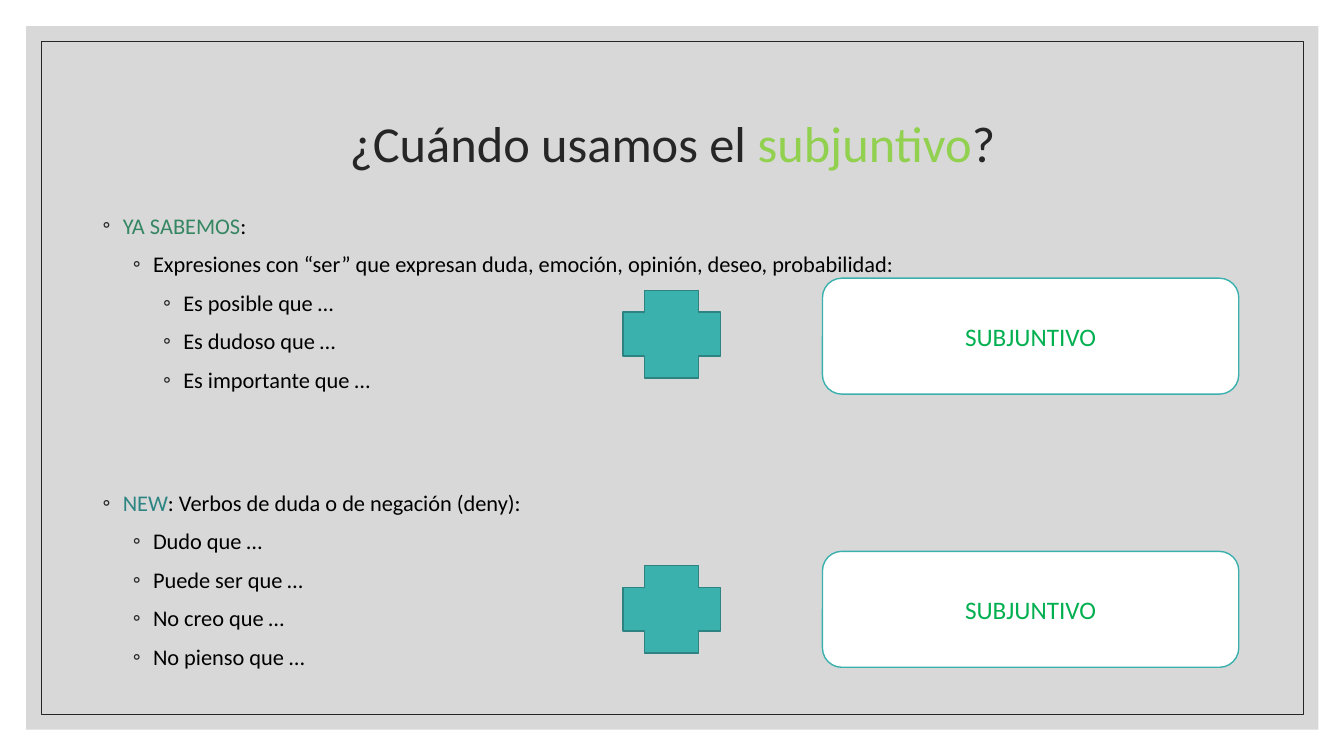
from lxml import etree
from pptx import Presentation
from pptx import util as u
from pptx.dml.color import RGBColor
from pptx.enum import shapes, text
from pptx.oxml import ns

FONT = "Calibri"
DARK, BLACK, WHITE = "262626", "000000", "FFFFFF"
TEAL, DARK_TEAL = "3BB1AE", "2C8381"

OUTLINE = [
    (0, 0, [("YA SABEMOS", "358662"), (":", BLACK)]),
    (1, 4.5, [("Expresiones con “ser” que expresan duda, emoción, opinión, "
               "deseo, probabilidad:", BLACK)]),
    (2, 4.5, [("Es posible que …", BLACK)]),
    (2, 4.5, [("Es dudoso que …", BLACK)]),
    (2, 4.5, [("Es importante que …", BLACK)]),
    (0, 64.8, [("NEW", "2C8582"),
               (": Verbos de duda o de negación (deny):", BLACK)]),
    (1, 4.5, [("Dudo que …", BLACK)]),
    (1, 4.5, [("Puede ser que …", BLACK)]),
    (1, 4.5, [("No creo que …", BLACK)]),
    (1, 4.5, [("No pienso que …", BLACK)]),
]


def set_color(color_format, value):
    color_format.rgb = RGBColor.from_string(value)


def add_runs(paragraph, runs, size):
    for words, color in runs:
        run = paragraph.add_run()
        run.text = words
        run.font.name = FONT
        run.font.size = u.Pt(size)
        set_color(run.font.color, color)


def add_panel(slide, kind, box, fill=None, line=None, weight=1):
    shape = slide.shapes.add_shape(kind, *map(u.Pt, box))
    shape.shadow.inherit = False
    if fill:
        shape.fill.solid()
        set_color(shape.fill.fore_color, fill)
    else:
        shape.fill.background()
    if line:
        set_color(shape.line.color, line)
        shape.line.width = u.Pt(weight)
    else:
        shape.line.fill.background()
    return shape


def set_opacity(shape, percent):
    color = shape.fill._xPr.find(ns.qn("a:solidFill"))[0]
    etree.SubElement(color, ns.qn("a:alpha"), val=str(percent * 1000))


def add_frame(slide):
    kind = shapes.MSO_SHAPE.RECTANGLE
    backdrop = add_panel(slide, kind, (18.72, 18.72, 923.04, 502.56), "BFBFBF")
    set_opacity(backdrop, 60)
    border = add_panel(slide, kind, (29.52, 29.52, 901.44, 480.96),
                       line=DARK, weight=0.5)
    for shape in (backdrop, border):
        slide.shapes.title.element.addprevious(shape.element)


def format_title(title):
    title.left, title.top, title.width, title.height = map(
        u.Pt, (84.24, 50.4, 792, 108))
    frame = title.text_frame
    frame.word_wrap = True
    frame.vertical_anchor = text.MSO_ANCHOR.MIDDLE
    paragraph = frame.paragraphs[0]
    paragraph.alignment = text.PP_ALIGN.CENTER
    paragraph.line_spacing = 0.9
    add_runs(paragraph, [("¿Cuándo usamos el ", DARK),
                         ("subjuntivo", "92D050"), ("?", DARK)], 36)


def add_bullet(paragraph, level):
    properties = paragraph._p.get_or_add_pPr()
    properties.set("marL", str(u.Pt(14.4 + 21.6 * level)))
    properties.set("indent", str(u.Pt(-14.4)))
    color = etree.SubElement(properties, ns.qn("a:buClr"))
    etree.SubElement(color, ns.qn("a:srgbClr"), val=DARK)
    etree.SubElement(properties, ns.qn("a:buFont"), typeface=FONT)
    etree.SubElement(properties, ns.qn("a:buChar"), char="◦")


def add_outline(slide):
    box = slide.shapes.add_textbox(*map(u.Pt, (66.24, 144, 828, 356.4)))
    frame = box.text_frame
    frame.word_wrap = True
    for index, (level, space, runs) in enumerate(OUTLINE):
        paragraph = frame.add_paragraph() if index else frame.paragraphs[0]
        paragraph.level = level
        add_bullet(paragraph, level)
        paragraph.line_spacing = 1.2
        paragraph.space_before = u.Pt(space)
        add_runs(paragraph, runs, 16)


def add_plus(slide, top):
    add_panel(slide, shapes.MSO_SHAPE.CROSS, (444.96, top, 69.84, 62.64),
              TEAL, DARK_TEAL)


def add_mood_card(slide, top):
    card = add_panel(slide, shapes.MSO_SHAPE.ROUNDED_RECTANGLE,
                     (587.52, top, 297.36, 82.8), WHITE, TEAL)
    card.text_frame.vertical_anchor = text.MSO_ANCHOR.MIDDLE
    paragraph = card.text_frame.paragraphs[0]
    paragraph.alignment = text.PP_ALIGN.CENTER
    add_runs(paragraph, [("SUBJUNTIVO", "00B050")], 18)


def main():
    presentation = Presentation()
    presentation.slide_width = u.Pt(960)
    presentation.slide_height = u.Pt(540)
    slide = presentation.slides.add_slide(presentation.slide_layouts[5])
    add_frame(slide)
    format_title(slide.shapes.title)
    add_outline(slide)
    for top in (207.36, 403.92):
        add_plus(slide, top)
    for top in (198.72, 393.84):
        add_mood_card(slide, top)
    presentation.save("out.pptx")


if __name__ == "__main__":
    main()
